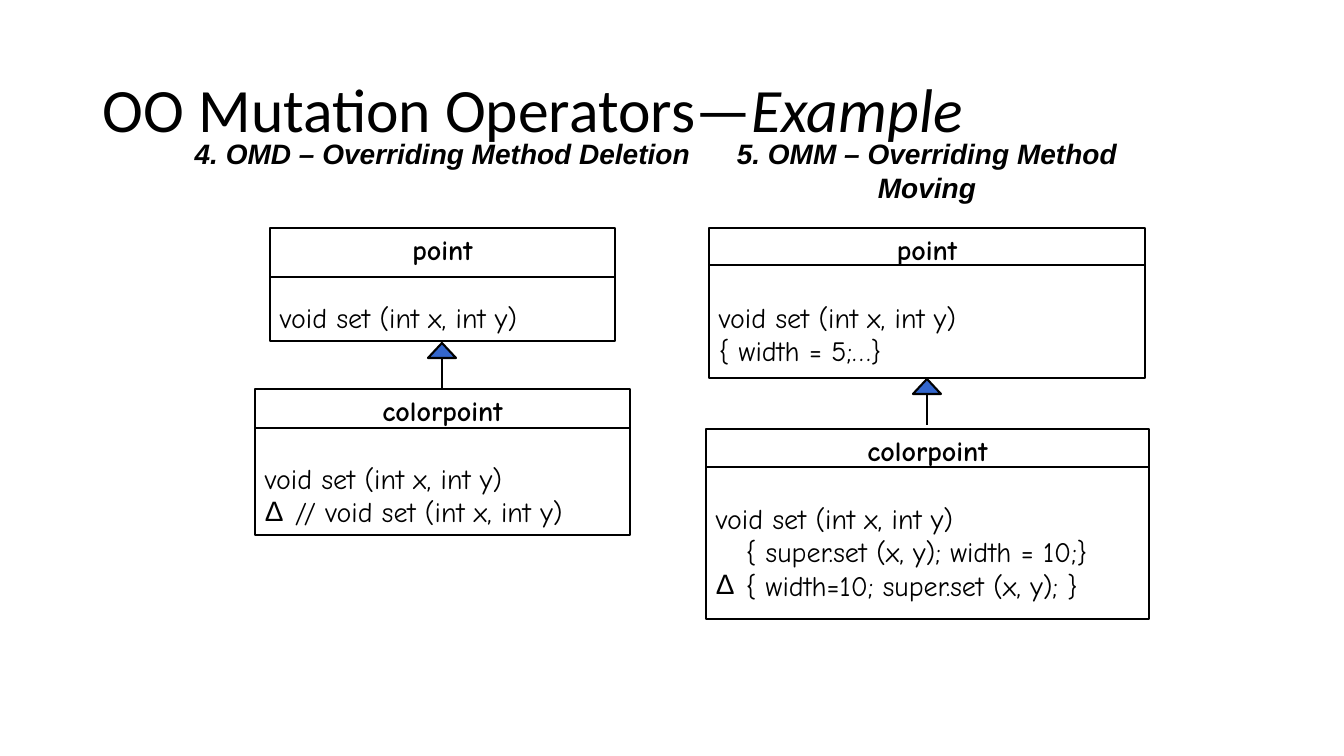
import pptx
import pptx.util
import pptx.dml.color
import pptx.enum.shapes
import pptx.enum.text
import lxml.etree
from pptx.oxml.ns import qn

TITLE = [("OO Mutation Operators—", False), ("Example", True)]
HEADS = [
    ("4. OMD – Overriding Method Deletion", (179, 132, 527, 44), False),
    ("5. OMM – Overriding Method Moving", (705, 132, 444, 78), True),
]
CLASSES = [
    ("point", (270, 228, 345, 113), 49, [("plain", "void set (int x, int y)")]),
    ("colorpoint", (255, 389, 375, 146), 39, [
        ("plain", "void set (int x, int y)"),
        ("delta", "// void set (int x, int y)"),
    ]),
    ("point", (709, 228, 436, 150), 37, [
        ("plain", "void set (int x, int y)"),
        ("plain", "{ width = 5;…}"),
    ]),
    ("colorpoint", (706, 429, 443, 190), 38, [
        ("plain", "void set (int x, int y)"),
        ("inset", "{ super.set (x, y); width = 10;}"),
        ("delta", "{ width=10; super.set (x, y); }"),
    ]),
]
ARROWS = [(442, 343), (927, 379)]
TIP_W, TIP_H, STEM = 28, 15, 31
INDENT = 30
COLORS = {"ink": "000000", "tip": "3366CC"}

KINDS = pptx.enum.shapes.MSO_SHAPE
ALIGN = pptx.enum.text.PP_ALIGN
ANCHOR = pptx.enum.text.MSO_ANCHOR


def px(n):
    return round(n * 914400 / 100.8)


def color(name):
    return pptx.dml.color.RGBColor.from_string(COLORS[name])


def style(para, face, size, bold=False, align=ALIGN.LEFT):
    para.alignment = align
    font = para.font
    font.name, font.size, font.bold = face, pptx.util.Pt(size), bold
    font.color.rgb = color("ink")


def outline(item):
    item.line.color.rgb = color("ink")
    item.line.width = pptx.util.Pt(1.5)


def add_box(kind, rect):
    box = slide.shapes.add_shape(kind, *map(px, rect))
    box.shadow.inherit = False
    box.fill.background()
    outline(box)
    return box


def add_line(x1, y1, x2, y2):
    line = slide.shapes.add_connector(
        pptx.enum.shapes.MSO_CONNECTOR.STRAIGHT, px(x1), px(y1), px(x2), px(y2))
    outline(line)
    lxml.etree.SubElement(line._element.spPr, qn("a:effectLst"))


def add_text(rect, wrap):
    frame = slide.shapes.add_textbox(*map(px, rect)).text_frame
    frame.word_wrap = wrap
    return frame


def set_indent(para, kind):
    if kind == "plain":
        return
    props = para._p.get_or_add_pPr()
    props.set("marL", str(px(INDENT)))
    if kind == "delta":
        props.set("indent", str(-px(INDENT)))
        lxml.etree.SubElement(props, qn("a:buFont")).set("typeface", "Arial")
        lxml.etree.SubElement(props, qn("a:buChar")).set("char", "Δ")


def add_class(name, rect, cut, lines):
    left, top, width, _ = rect
    frame = add_box(KINDS.RECTANGLE, rect).text_frame
    frame.word_wrap = True
    frame.vertical_anchor = ANCHOR.TOP
    para = frame.paragraphs[0]
    para.text = name
    para.space_after = pptx.util.Pt(24)
    style(para, "Comic Neue", 20, True, ALIGN.CENTER)
    for kind, text in lines:
        para = frame.add_paragraph()
        para.text = text
        style(para, "Comic Neue", 20)
        set_indent(para, kind)
    add_line(left, top + cut, left + width, top + cut)


def add_arrow(mid, top):
    tip = add_box(KINDS.ISOSCELES_TRIANGLE, (mid - TIP_W / 2, top, TIP_W, TIP_H))
    tip.fill.solid()
    tip.fill.fore_color.rgb = color("tip")
    add_line(mid, top + TIP_H, mid, top + TIP_H + STEM)


deck = pptx.Presentation()
deck.slide_width, deck.slide_height = px(1344), px(756)
slide = deck.slides.add_slide(deck.slide_layouts[6])

frame = add_text((93, 40, 1159, 146), True)
frame.vertical_anchor = ANCHOR.MIDDLE
para = frame.paragraphs[0]
para.line_spacing = 0.9
style(para, "Calibri", 44)
for text, slant in TITLE:
    run = para.add_run()
    run.text = text
    run.font.italic = slant

for text, rect, wrap in HEADS:
    para = add_text(rect, wrap).paragraphs[0]
    para.text = text
    style(para, "Arial", 20, True, ALIGN.CENTER)
    para.font.italic = True

for item in CLASSES:
    add_class(*item)
for mid, top in ARROWS:
    add_arrow(mid, top)

deck.save("out.pptx")
